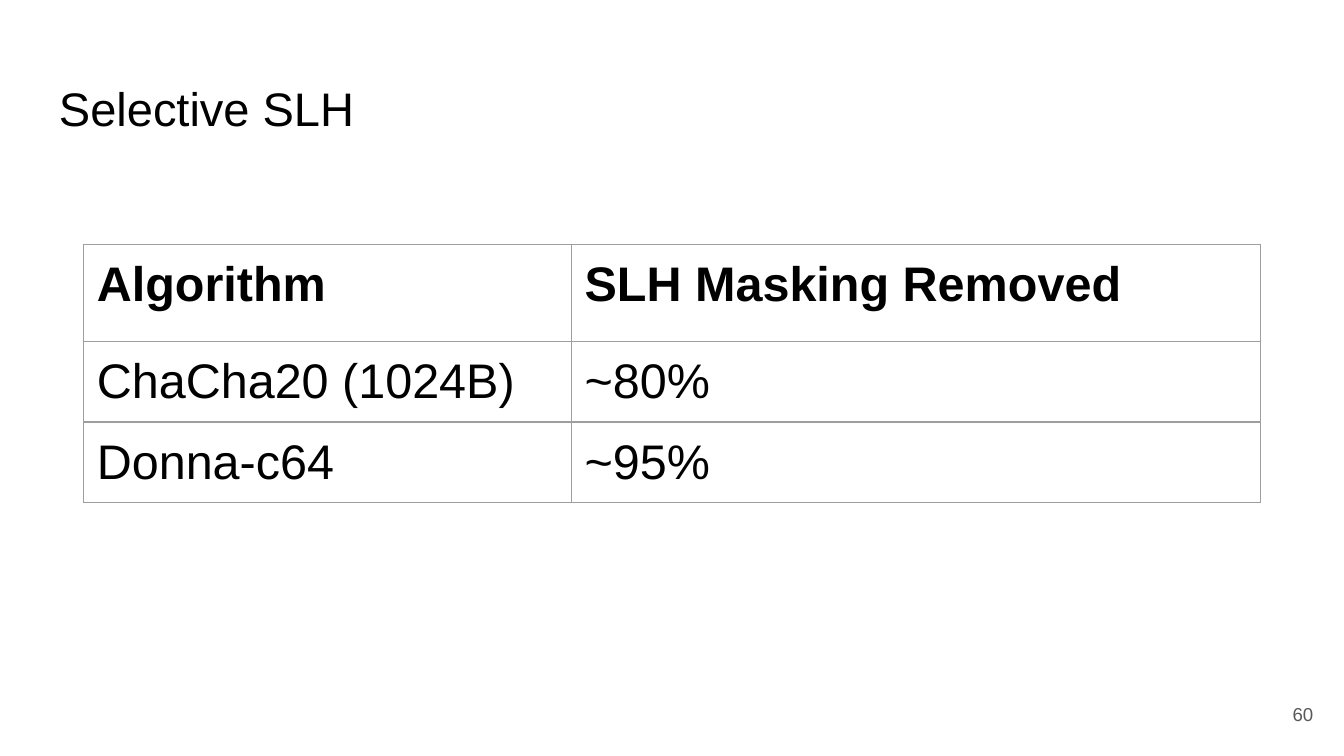
from lxml.etree import SubElement
from pptx import Presentation
from pptx.dml.color import RGBColor
from pptx.enum.text import MSO_ANCHOR, PP_ALIGN
from pptx.oxml.ns import qn
from pptx.util import Inches, Pt


def style(para, size, color, bold=False):
    font = para.font
    font.name, font.size, font.bold = "Arial", Pt(size), bold
    font.color.rgb = RGBColor.from_string(color)


def label(text, left, top, width, height, size, color):
    frame = slide.shapes.add_textbox(
        Inches(left), Inches(top), Inches(width), Inches(height)).text_frame
    frame.word_wrap = True
    frame.margin_left = frame.margin_right = Inches(0.1)
    frame.margin_top = frame.margin_bottom = Inches(0.1)
    frame.text = text
    style(frame.paragraphs[0], size, color)
    return frame


deck = Presentation()
deck.slide_width, deck.slide_height = Inches(10), Inches(10 * 9 / 16)
slide = deck.slides.add_slide(deck.slide_layouts[6])

label("Selective SLH", 0.34, 0.49, 9.32, 0.63, 25.2, "000000")
number = label("60", 9.27, 5.1, 0.6, 0.43, 10, "595959")
number.vertical_anchor = MSO_ANCHOR.MIDDLE
number.paragraphs[0].alignment = PP_ALIGN.RIGHT

rows = [
    ("Algorithm", "SLH Masking Removed"),
    ("ChaCha20 (1024B)", "~80%"),
    ("Donna-c64", "~95%"),
]
widths = [3.63, 5.13]
heights = [0.72, 0.6, 0.6]
table = slide.shapes.add_table(
    len(rows), len(widths), Inches(0.62), Inches(1.82),
    Inches(sum(widths)), Inches(sum(heights))).table
table.horz_banding = False
for col, width in zip(table.columns, widths):
    col.width = Inches(width)

for r, texts in enumerate(rows):
    table.rows[r].height = Inches(heights[r])
    for c, text in enumerate(texts):
        cell = table.cell(r, c)
        cell.text = text
        cell.margin_left = cell.margin_right = cell.margin_top = Inches(0.1)
        cell.margin_bottom = Inches(0.06)
        style(cell.text_frame.paragraphs[0], 26, "000000", r == 0)
        props = cell._tc.get_or_add_tcPr()
        for side in ("lnL", "lnR", "lnT", "lnB"):
            line = SubElement(props, qn("a:" + side), w=str(Pt(0.75)))
            fill = SubElement(line, qn("a:solidFill"))
            SubElement(fill, qn("a:srgbClr"), val="9E9E9E")
        cell.fill.background()

deck.save("out.pptx")
